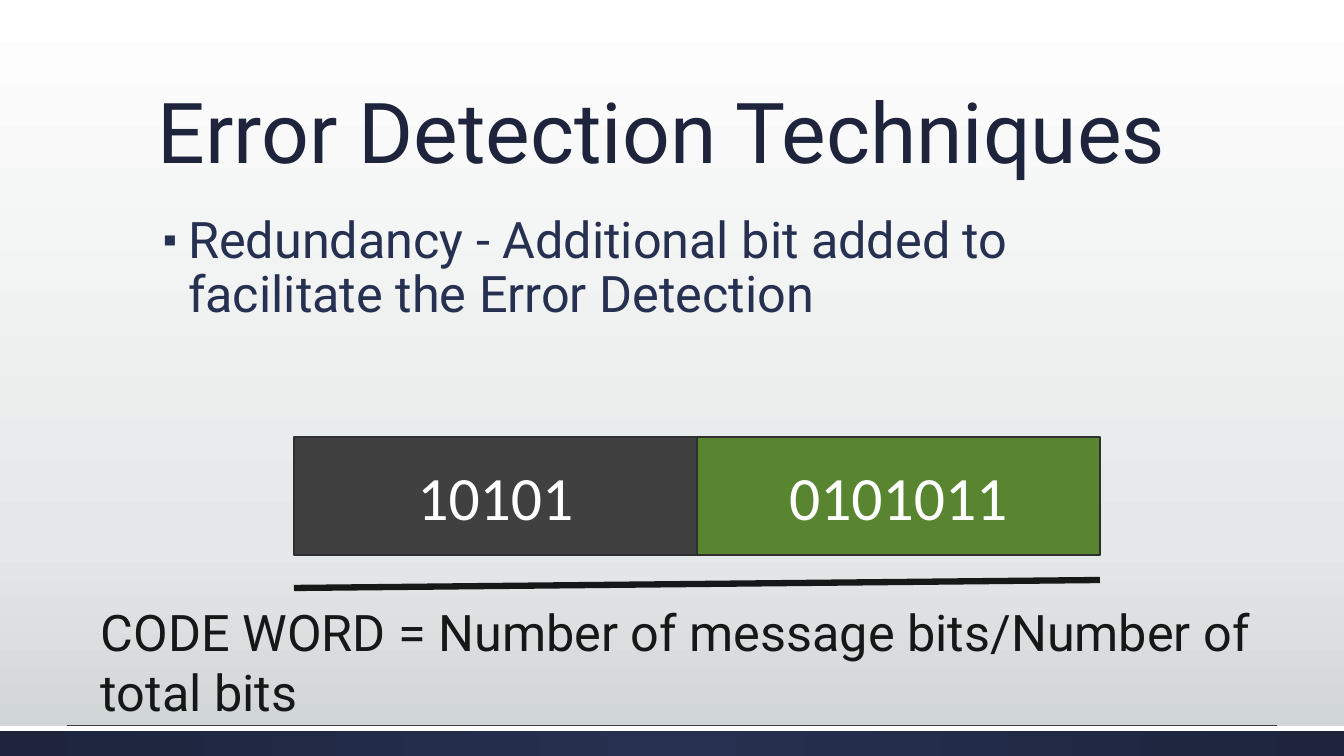
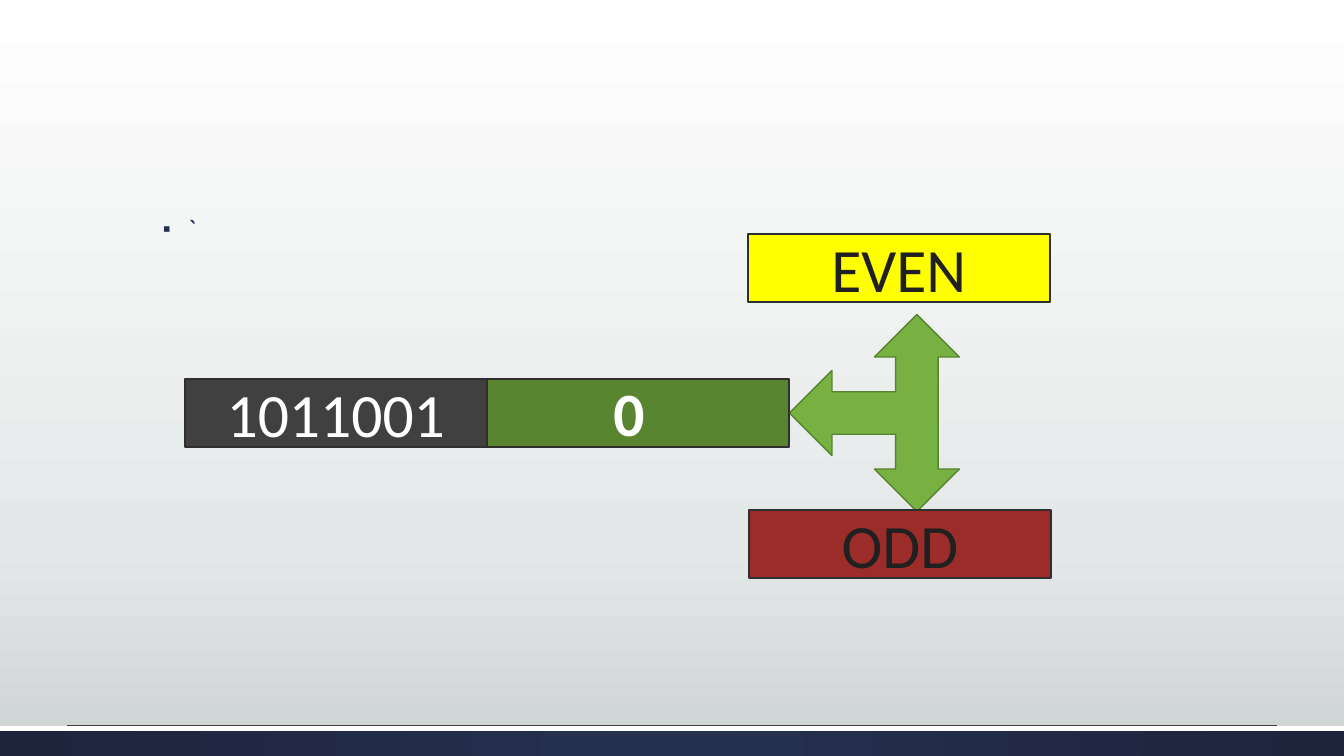
"""Builds two slides on error detection: redundancy bits and parity."""
from lxml import etree
from pptx import Presentation
from pptx.dml.color import RGBColor
from pptx.enum.shapes import MSO_CONNECTOR as Connector, MSO_SHAPE as Shape
from pptx.enum.text import MSO_ANCHOR as Anchor, PP_ALIGN as Align
from pptx.oxml import parse_xml
from pptx.oxml.ns import nsdecls, qn
from pptx.util import Emu, Pt

PX = 9144000 / 1008
WIDTH, HEIGHT = 1344, 756

NAVY, DEEP_NAVY, WHITE, INK, TEXT_DARK = "263050", "1D243C", "FFFFFF", "161818", "202020"
GREY, GREEN, YELLOW, RED, EDGE = "404040", "598531", "FFFF00", "9B2C29", "2F2F2F"
ARROW_FILL, ARROW_EDGE = "77B142", "588331"

BACKDROP = [(0, WHITE), (72, "E5E8E8"), (100, "CDD2D2")]
BAND = [(0, NAVY), (100, DEEP_NAVY)]
DOWNWARD = '<a:lin ang="5400000" scaled="0"/>'
FROM_CENTRE = ('<a:path path="circle"><a:fillToRect l="50000" t="50000" '
               'r="50000" b="50000"/></a:path>')

TITLE = {"size": 60, "name": "Roboto", "color": DEEP_NAVY}
BODY = {"size": 36, "name": "Roboto", "color": NAVY}
SMALL_BODY = {"size": 20, "name": "Calibri", "color": NAVY}
CAPTION = {"size": 36, "name": "Roboto", "color": INK}
LIGHT_BITS = {"size": 44, "name": "Calibri", "color": WHITE}
BOLD_BIT = {**LIGHT_BITS, "bold": True}
DARK_LABEL = {**LIGHT_BITS, "color": TEXT_DARK}

TITLE_BOX = (148, 51, 1048, 136)
BODY_BOX = (148, 210, 1048, 455)
CODE_LEFT, CODE_TOP, CODE_WIDTH, CODE_HEIGHT = 294, 437, 403, 118
CELL_WIDTH, CELL_HEIGHT = 302, 68
WORD_LEFT, WORD_TOP = 185, 379

SLIDES = [
    {
        "title": "Error Detection Techniques",
        "body": ("Redundancy - Additional bit added to facilitate the Error Detection", BODY),
        "boxes": [
            ((CODE_LEFT + i * CODE_WIDTH, CODE_TOP, CODE_WIDTH, CODE_HEIGHT),
             color, text, LIGHT_BITS)
            for i, (color, text) in enumerate([(GREY, "10101"), (GREEN, "0101011")])
        ],
        "rule": (CODE_LEFT, 588, CODE_LEFT + 2 * CODE_WIDTH, 580),
        "caption": ((91, 596, 1232, 72),
                    "CODE WORD = Number of message bits/Number of total bits", CAPTION),
    },
    {
        "body": ("`", SMALL_BODY),
        "boxes": [
            ((left, top, CELL_WIDTH, CELL_HEIGHT), color, text, font)
            for left, top, color, text, font in [
                (WORD_LEFT + CELL_WIDTH, WORD_TOP, GREEN, "", LIGHT_BITS),
                (WORD_LEFT, WORD_TOP, GREY, "1011001", LIGHT_BITS),
                (748, 234, YELLOW, "EVEN", DARK_LABEL),
                (749, 510, RED, "ODD", DARK_LABEL),
            ]
        ],
        "arrow": (776, 328, 197, 170),
        "parity": ((603, 370, 52, 85), "0", BOLD_BIT),
    },
]


def px(*lengths):
    return [Emu(round(length * PX)) for length in lengths]


def rgb(color):
    return RGBColor.from_string(color)


def paint_gradient(fill, element, stops, direction):
    fill.gradient()
    old = next(element.iter(qn("a:gradFill")))
    marks = "".join(f'<a:gs pos="{at * 1000}"><a:srgbClr val="{color}"/></a:gs>'
                    for at, color in stops)
    old.getparent().replace(old, parse_xml(
        f'<a:gradFill {nsdecls("a")} rotWithShape="1"><a:gsLst>{marks}</a:gsLst>'
        f'{direction}</a:gradFill>'))


def write(shape, text, font, align=Align.LEFT, anchor=Anchor.TOP, wrap=True, line_spacing=1.0):
    frame = shape.text_frame
    frame.word_wrap, frame.vertical_anchor = wrap, anchor
    paragraph = frame.paragraphs[0]
    paragraph.alignment, paragraph.line_spacing = align, line_spacing
    run = paragraph.add_run()
    run.text = text
    for key, value in font.items():
        if key == "color":
            run.font.color.rgb = rgb(value)
        else:
            setattr(run.font, key, Pt(value) if key == "size" else value)
    return paragraph


def add_text(slide, box, text, font, **layout):
    return write(slide.shapes.add_textbox(*px(*box)), text, font, **layout)


def add_bullet(slide, text, font):
    paragraph = add_text(slide, BODY_BOX, text, font, line_spacing=0.9)
    paragraph.space_before = Pt(18)
    properties = paragraph._p.get_or_add_pPr()
    properties.set("marL", "274320")
    properties.set("indent", "-228600")
    for xml in (f'<a:buClr {nsdecls("a")}><a:srgbClr val="{NAVY}"/></a:buClr>',
                f'<a:buSzPct {nsdecls("a")} val="80000"/>',
                f'<a:buFont {nsdecls("a")} typeface="Arial"/>',
                f'<a:buChar {nsdecls("a")} char="▪"/>'):
        properties.append(parse_xml(xml))


def add_shape(slide, kind, box, color, edge=None):
    shape = slide.shapes.add_shape(kind, *px(*box))
    shape.shadow.inherit = False
    shape.fill.solid()
    shape.fill.fore_color.rgb = rgb(color)
    if edge:
        shape.line.color.rgb = rgb(edge)
        shape.line.width = Pt(1)
    else:
        shape.line.fill.background()
    return shape


def add_line(slide, ends, color, width):
    line = slide.shapes.add_connector(Connector.STRAIGHT, *px(*ends))
    line.line.color.rgb = rgb(color)
    line.line.width = Pt(width)
    etree.SubElement(line.element.spPr, qn("a:effectLst"))


def add_base(presentation):
    slide = presentation.slides.add_slide(presentation.slide_layouts[6])
    paint_gradient(slide.background.fill, slide.element, BACKDROP, DOWNWARD)
    band = add_shape(slide, Shape.RECTANGLE, (0, 726, WIDTH, 30), NAVY)
    paint_gradient(band.fill, band.element, BAND, FROM_CENTRE)
    add_shape(slide, Shape.RECTANGLE, (0, 726, WIDTH, 5), WHITE)
    add_line(slide, (67, 725, 1277, 725), GREY, 0.5)
    return slide


def build_slide(presentation, content):
    slide = add_base(presentation)
    if "title" in content:
        add_text(slide, TITLE_BOX, content["title"], TITLE,
                 anchor=Anchor.BOTTOM, line_spacing=0.9)
    add_bullet(slide, *content["body"])
    if "arrow" in content:
        arrow = add_shape(slide, Shape.LEFT_RIGHT_UP_ARROW, content["arrow"],
                          ARROW_FILL, ARROW_EDGE)
        arrow.rotation = 270
    for box, color, text, font in content["boxes"]:
        shape = add_shape(slide, Shape.RECTANGLE, box, color, EDGE)
        if text:
            write(shape, text, font, align=Align.CENTER, anchor=Anchor.MIDDLE)
    if "rule" in content:
        add_line(slide, content["rule"], INK, 4.5)
    if "caption" in content:
        add_text(slide, *content["caption"])
    if "parity" in content:
        add_text(slide, *content["parity"], align=Align.CENTER, wrap=False)


def main():
    presentation = Presentation()
    presentation.slide_width, presentation.slide_height = px(WIDTH, HEIGHT)
    for content in SLIDES:
        build_slide(presentation, content)
    presentation.save("out.pptx")


if __name__ == "__main__":
    main()
